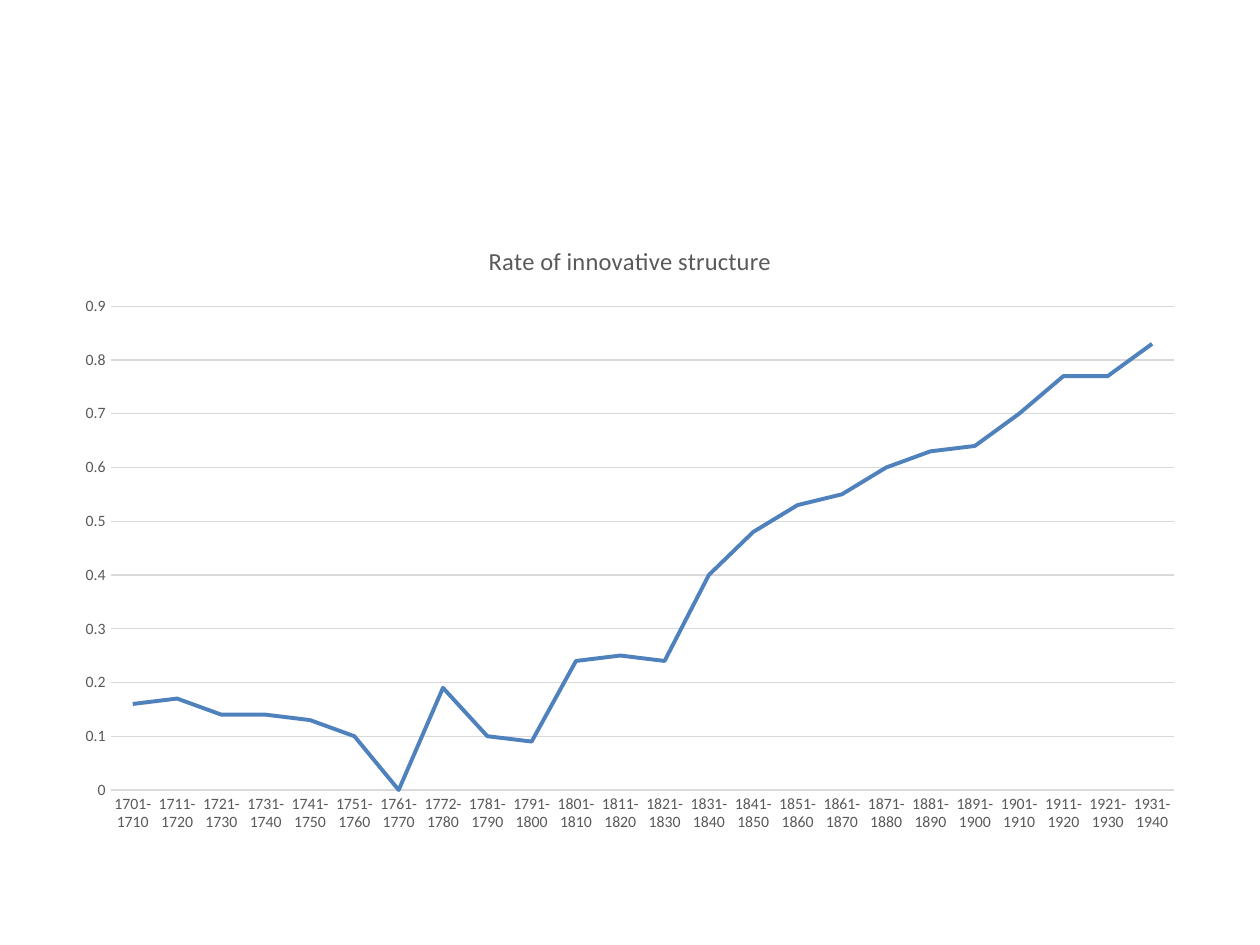
from dataclasses import dataclass
from typing import Any

from pptx import Presentation
from pptx.chart.data import CategoryChartData
from pptx.dml.color import RGBColor
from pptx.enum.chart import XL_CHART_TYPE, XL_MARKER_STYLE, XL_TICK_MARK
from pptx.util import Inches, Pt

RATES = [0.16, 0.17, 0.14, 0.14, 0.13, 0.1, 0, 0.19, 0.1, 0.09, 0.24, 0.25,
         0.24, 0.4, 0.48, 0.53, 0.55, 0.6, 0.63, 0.64, 0.7, 0.77, 0.77, 0.83]
IRREGULAR_STARTS = {1771: 1772}


def rgb(value):
    return RGBColor.from_string(value)


def decade_labels(first, count):
    starts = range(first, first + 10 * count, 10)
    return [f"{IRREGULAR_STARTS.get(y, y)}-{y + 9}" for y in starts]


@dataclass
class Deck:
    prs: Any
    s: Any = None
    font: str = "Calibri"
    text: str = "595959"
    grid: str = "D9D9D9"
    accent: str = "4F81BD"

    def add_slide(self):
        self.s = self.prs.slides.add_slide(self.prs.slide_layouts[6])

    def style_font(self, font, size):
        font.name = self.font
        font.size = Pt(size)
        font.bold = False
        font.color.rgb = rgb(self.text)

    def style_line(self, line, color, width):
        line.color.rgb = rgb(color)
        line.width = Pt(width)

    def style_axis(self, axis):
        axis.major_tick_mark = XL_TICK_MARK.NONE
        axis.minor_tick_mark = XL_TICK_MARK.NONE
        self.style_font(axis.tick_labels.font, 9)

    def line_chart(self, x, y, w, h, title, name, labels, values):
        data = CategoryChartData(number_format="General")
        data.categories = labels
        data.add_series(name, values)
        width, height = self.prs.slide_width, self.prs.slide_height
        box = [round(v) for v in (x * width, y * height, w * width, h * height)]
        chart = self.s.shapes.add_chart(XL_CHART_TYPE.LINE, *box, data).chart
        self.style_font(chart.font, 10)
        chart.has_legend = False

        chart.has_title = True
        tf = chart.chart_title.text_frame
        tf.text = title
        self.style_font(tf.paragraphs[0].runs[0].font, 14)
        chart.chart_title.include_in_layout = False

        self.style_axis(chart.category_axis)
        self.style_line(chart.category_axis.format.line, self.grid, 0.75)
        axis = chart.value_axis
        self.style_axis(axis)
        axis.format.line.fill.background()
        axis.minimum_scale, axis.maximum_scale, axis.major_unit = 0, 0.9, 0.1
        axis.has_major_gridlines = True
        self.style_line(axis.major_gridlines.format.line, self.grid, 0.75)

        plot = chart.plots[0]
        plot.vary_by_categories = False
        series = plot.series[0]
        series.smooth = False
        series.marker.style = XL_MARKER_STYLE.NONE
        self.style_line(series.format.line, self.accent, 2.25)


def main():
    prs = Presentation()
    prs.slide_width, prs.slide_height = Inches(10), Inches(7.5)
    deck = Deck(prs)
    deck.add_slide()
    deck.line_chart(0.05, 1.75 / 7.5, 0.9, 0.66, "Rate of innovative structure",
                    "Series 1", decade_labels(1701, len(RATES)), RATES)
    prs.save("out.pptx")


if __name__ == "__main__":
    main()
